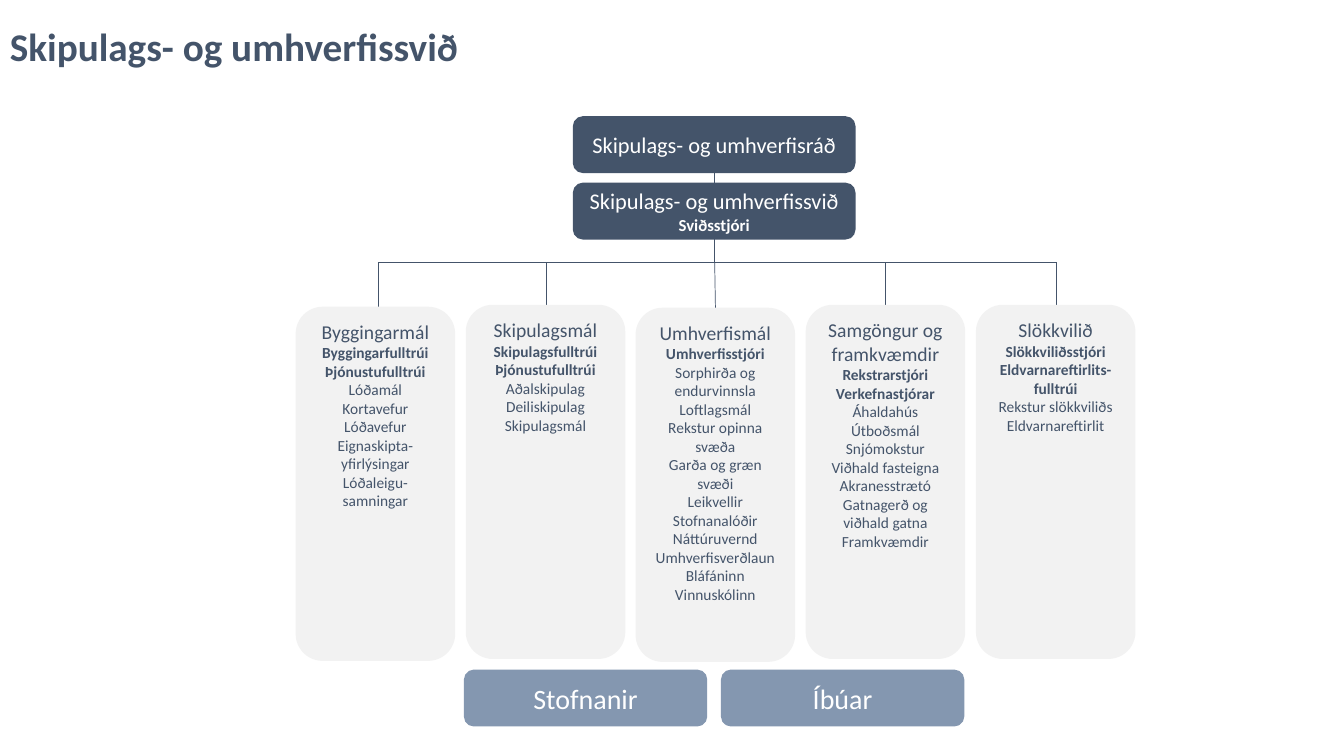
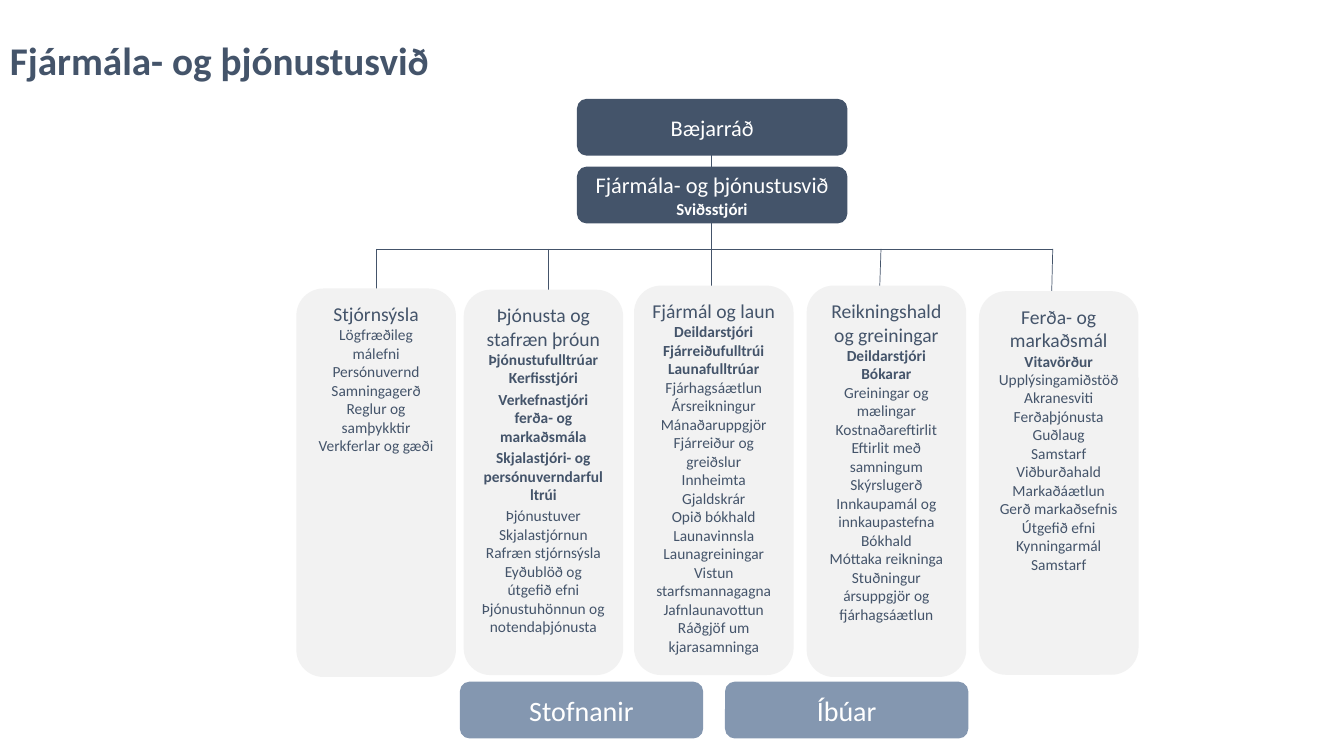
import dataclasses
import lxml.etree
import pptx
import pptx.dml.color
import pptx.enum.shapes
import pptx.enum.text
import pptx.oxml.ns
import pptx.util

Pt = pptx.util.Pt
Kind = pptx.enum.shapes.MSO_SHAPE
Align = pptx.enum.text.PP_ALIGN
Anchor = pptx.enum.text.MSO_ANCHOR


def shade(code):
    """Turn a hex code into a colour."""
    return pptx.dml.color.RGBColor.from_string(code)


@dataclasses.dataclass(frozen=True)
class Theme:
    """Colours, type and line widths that the slides share."""
    navy = shade("44546A")
    steel = shade("8497B0")
    pale = shade("F2F2F2")
    white = shade("FFFFFF")
    font = "Calibri"
    rule = 0.5
    edge = 1
    type = {
        "title": {"size": Pt(28), "bold": True},
        "base": {"size": Pt(20), "bold": False},
        "board": {"size": Pt(16), "bold": False},
        "chief": {"size": Pt(12), "bold": True},
        "head": {"size": Pt(14), "bold": False},
        "lead": {"size": Pt(11), "bold": True},
        "item": {"size": Pt(11), "bold": False},
    }


def box(slide, area, fill, ink, rows, kind=Kind.ROUNDED_RECTANGLE,
        anchor=Anchor.MIDDLE, align=Align.CENTER):
    """Add a filled shape; each row is text, type style and space after."""
    shape = slide.shapes.add_shape(kind, *map(Pt, area))
    shape.shadow.inherit = False
    shape.fill.solid()
    shape.fill.fore_color.rgb = fill
    shape.line.color.rgb = fill
    shape.line.width = Pt(Theme.edge)
    frame = shape.text_frame
    frame.word_wrap = True
    frame.vertical_anchor = anchor
    for i, (text, style, after) in enumerate(rows):
        para = frame.add_paragraph() if i else frame.paragraphs[0]
        para.alignment = align
        para.space_after = Pt(after)
        run = para.add_run()
        run.text = text
        run.font.color.rgb = ink
        for key, value in {"name": Theme.font, **Theme.type[style]}.items():
            setattr(run.font, key, value)


# Each card: left, top, height, line top x, line foot x,
# head, leads, spaced leads, items
charts = [
    {
        "title": "Skipulags- og umhverfissvið",
        "band": (0, -2.9, 340, 70.6),
        "board": "Skipulags- og umhverfisráð",
        "left": 409.7, "width": 200.9, "tops": (83.5, 131),
        "bar": 187.5, "trunk": 510.5,
        "feet": (331.9, 515.5), "floor": 478.8,
        "cards": [
            (211.7, 219.6, 252, 270, 270, "Byggingarmál",
             ["Byggingarfulltrúi", "Þjónustufulltrúi"], [],
             ["Lóðamál", "Kortavefur", "Lóðavefur",
              "Eignaskipta- yfirlýsingar", "Lóðaleigu-samningar"]),
            (333.2, 218.2, 252, 390.2, 390.2, "Skipulagsmál",
             ["Skipulagsfulltrúi", "Þjónustufulltrúi"], [],
             ["Aðalskipulag", "Deiliskipulag", "Skipulagsmál"]),
            (454.5, 220.3, 252, 510.5, 511.2, "Umhverfismál",
             ["Umhverfisstjóri"], [],
             ["Sorphirða og endurvinnsla", "Loftlagsmál",
              "Rekstur opinna svæða", "Garða og græn svæði", "Leikvellir",
              "Stofnanalóðir", "Náttúruvernd", "Umhverfisverðlaun",
              "Bláfáninn", "Vinnuskólinn"]),
            (576, 218.2, 252, 632.7, 632.7, "Samgöngur og framkvæmdir",
             ["Rekstrarstjóri", "Verkefnastjórar"], [],
             ["Áhaldahús", "Útboðsmál", "Snjómokstur", "Viðhald fasteigna",
              "Akranesstrætó", "Gatnagerð og viðhald gatna",
              "Framkvæmdir"]),
            (697.6, 218.2, 252, 754.6, 754.6, "Slökkvilið",
             ["Slökkviliðsstjóri", "Eldvarnareftirlits-fulltrúi"], [],
             ["Rekstur slökkviliðs", "Eldvarnareftirlit"]),
        ],
    },
    {
        "title": "Fjármála- og þjónustusvið",
        "band": (0, 13, 339.1, 59),
        "board": "Bæjarráð",
        "left": 412.6, "width": 192.2, "tops": (71.1, 119.5),
        "bar": 177.8, "trunk": 508.3,
        "feet": (329, 518.4), "floor": 487.4,
        "cards": [
            (212.2, 206.6, 276.5, 268.6, 268.6, "Stjórnsýsla", [], [],
             ["Lögfræðileg málefni", "Persónuvernd", "Samningagerð",
              "Reglur og samþykktir", "Verkferlar og gæði"]),
            (331.7, 207.4, 274.3, 391.7, 391.7, "Þjónusta og stafræn þróun",
             ["Þjónustufulltrúar"],
             ["Kerfisstjóri", "Verkefnastjóri ferða- og markaðsmála",
              "Skjalastjóri- og persónuverndarfulltrúi"],
             ["Þjónustuver", "Skjalastjórnun", "Rafræn stjórnsýsla",
              "Eyðublöð og útgefið efni",
              "Þjónustuhönnun og notendaþjónusta"]),
            (453.4, 204.5, 277.2, 508.3, 508.3, "Fjármál og laun",
             ["Deildarstjóri", "Fjárreiðufulltrúi", "Launafulltrúar"], [],
             ["Fjárhagsáætlun", "Ársreikningur", "Mánaðaruppgjör",
              "Fjárreiður og greiðslur", "Innheimta", "Gjaldskrár",
              "Opið bókhald", "Launavinnsla", "Launagreiningar",
              "Vistun starfsmannagagna", "Jafnlaunavottun",
              "Ráðgjöf um kjarasamninga"]),
            (576.7, 204.5, 278.6, 629.3, 628.1, "Reikningshald og greiningar",
             ["Deildarstjóri", "Bókarar"], [],
             ["Greiningar og mælingar", "Kostnaðareftirlit",
              "Eftirlit með samningum", "Skýrslugerð",
              "Innkaupamál og innkaupastefna", "Bókhald",
              "Móttaka reikninga",
              "Stuðningur ársuppgjör og fjárhagsáætlun"]),
            (699.8, 208.5, 273, 752, 751, "Ferða- og markaðsmál",
             ["Vitavörður"], [],
             ["Upplýsingamiðstöð", "Akranesviti", "Ferðaþjónusta", "Guðlaug",
              "Samstarf", "Viðburðahald", "Markaðáætlun",
              "Gerð markaðsefnis", "Útgefið efni Kynningarmál",
              "Samstarf"]),
        ],
    },
]

deck = pptx.Presentation()
deck.slide_width, deck.slide_height = Pt(960), Pt(540)

for chart in charts:
    slide = deck.slides.add_slide(deck.slide_layouts[6])
    cards, bar, trunk = chart["cards"], chart["bar"], chart["trunk"]

    # Lines: trunk, cross bar and a drop to each card
    lines = [(trunk, chart["tops"][0] + 20, trunk, bar),
             (cards[0][3], bar, cards[-1][3], bar)]
    lines += [(tip, bar, foot, top + 10)
              for _, top, _, tip, foot, *_ in cards]
    for ends in lines:
        line = slide.shapes.add_connector(
            pptx.enum.shapes.MSO_CONNECTOR.STRAIGHT, *map(Pt, ends))
        line.line.color.rgb = Theme.navy
        line.line.width = Pt(Theme.rule)
        lxml.etree.SubElement(line._element.spPr,
                              pptx.oxml.ns.qn("a:effectLst"))

    box(slide, chart["band"], Theme.white, Theme.navy,
        [(chart["title"], "title", 0)], Kind.RECTANGLE, align=Align.LEFT)

    # Board above, division below
    ranks = [[(chart["board"], "board", 0)],
             [(chart["title"], "board", 0), ("Sviðsstjóri", "chief", 0)]]
    for top, rows in zip(chart["tops"], ranks):
        box(slide, (chart["left"], top, chart["width"], 39.6),
            Theme.navy, Theme.white, rows)

    for left, top, height, _, _, head, leads, spaced, items in cards:
        rows = [(head, "head", 0)]
        rows += [(text, "lead", 0) for text in leads]
        rows += [(text, "lead", 2) for text in spaced]
        rows += [(text, "item", 0) for text in items]
        box(slide, (left, top, 113, height), Theme.pale, Theme.navy, rows,
            anchor=Anchor.TOP)

    for left, text in zip(chart["feet"], ("Stofnanir", "Íbúar")):
        box(slide, (left, chart["floor"], 172.8, 39.6),
            Theme.steel, Theme.white, [(text, "base", 0)])

deck.save("out.pptx")
